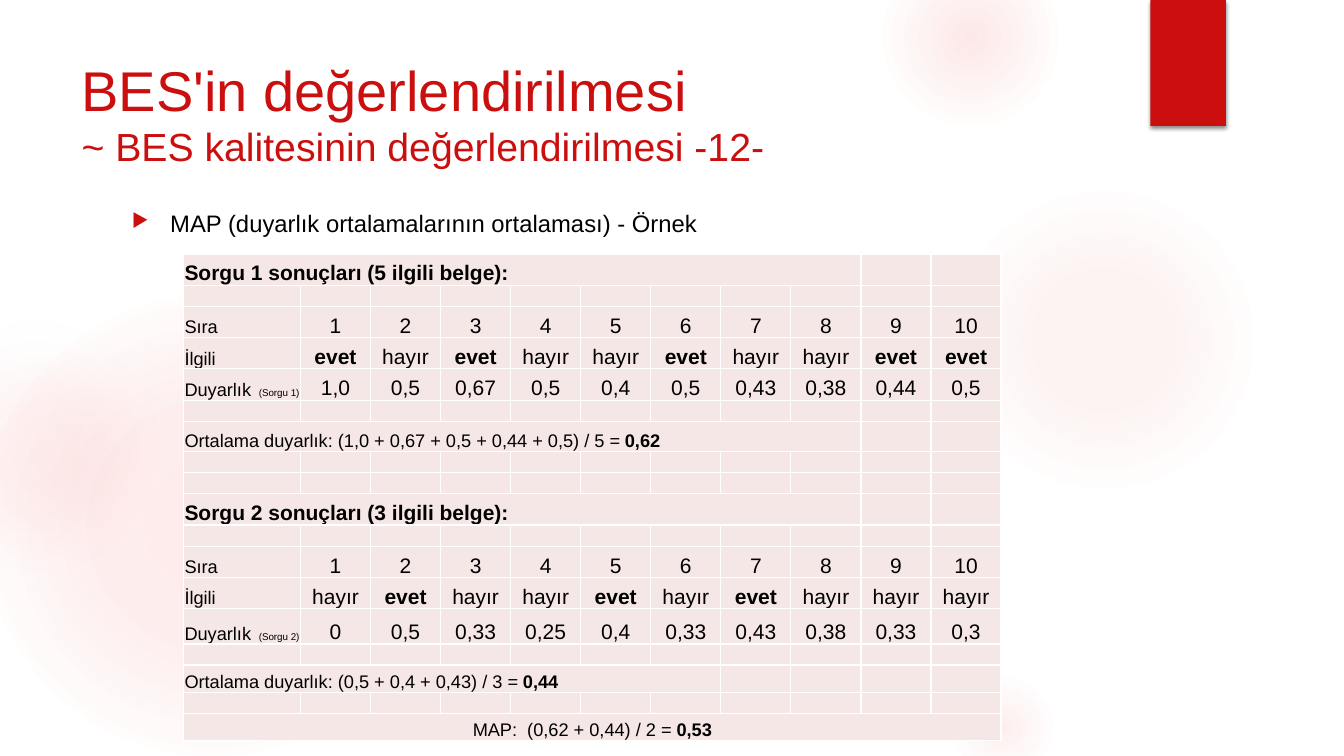
from lxml import etree
from pptx import Presentation
from pptx.dml.color import RGBColor
from pptx.enum.shapes import MSO_SHAPE
from pptx.enum.text import MSO_ANCHOR, PP_ALIGN
from pptx.oxml import parse_xml
from pptx.oxml.ns import nsdecls, qn
from pptx.util import Inches, Pt

OVAL, RECTANGLE = MSO_SHAPE.OVAL, MSO_SHAPE.RECTANGLE
TOP, BOTTOM = MSO_ANCHOR.TOP, MSO_ANCHOR.BOTTOM
LEFT, CENTER = PP_ALIGN.LEFT, PP_ALIGN.CENTER

THEME = {
    "font": "Arial", "red": "CB0F0F", "glow": "F35C5C", "pale": "F3F3F3",
    "cell": "F6E7E7", "grid": "FFFFFF", "ink": "000000",
    "title": 40, "subtitle": 28, "bullet": 17, "value": 15, "label": 13, "note": 7, "gap": 8,
}


def style(font, size, color="ink", bold=False):
    font.name = THEME["font"]
    font.size = Pt(THEME[size])
    font.bold = bold
    font.color.rgb = RGBColor.from_string(THEME[color])


def write(cell, pieces, align=LEFT):
    paragraph = cell.text_frame.paragraphs[0]
    paragraph.alignment = align
    for words, size, bold in pieces:
        run = paragraph.add_run()
        run.text = words
        style(run.font, size, bold=bold)


deck = Presentation()
deck.slide_width, deck.slide_height = Inches(13.33), Inches(7.5)
slide = deck.slides.add_slide(deck.slide_layouts[5])

glows = [
    (-0.17, 2.92, 4.58, [(0, 11), (36, 10), (75, 0)], "glow"),
    (-0.92, 3.17, 2.58, [(0, 8), (36, 5), (71, 0)], "pale"),
    (9.41, 1.83, 3.08, [(0, 7), (36, 6), (69, 0)], "glow"),
    (8.75, -0.5, 1.75, [(0, 14), (36, 7), (73, 0)], "glow"),
    (9.41, 6.67, 1.08, [(0, 10), (31, 5), (66, 0)], "glow"),
]
for left, top, size, stops, edge in glows:
    glow = slide.shapes.add_shape(OVAL, Inches(left), Inches(top), Inches(size), Inches(size))
    glow.shadow.inherit = False
    glow.line.fill.background()
    colors = [THEME["glow"], THEME["glow"], THEME[edge]]
    stop_list = "".join(
        f'<a:gs pos="{place * 1000}"><a:srgbClr val="{color}"><a:alpha val="{alpha * 1000}"/></a:srgbClr></a:gs>'
        for (place, alpha), color in zip(stops, colors))
    glow.element.spPr.find(qn("a:prstGeom")).addnext(parse_xml(
        f'<a:gradFill {nsdecls("a")} rotWithShape="1"><a:gsLst>{stop_list}</a:gsLst><a:path path="circle">'
        '<a:fillToRect l="50000" t="50000" r="50000" b="50000"/></a:path></a:gradFill>'))

ribbon = slide.shapes.add_shape(RECTANGLE, Inches(11.41), 0, Inches(0.75), Inches(1.25))
ribbon.fill.solid()
ribbon.fill.fore_color.rgb = RGBColor.from_string(THEME["red"])
ribbon.line.fill.background()
ribbon.shadow.inherit = False
ribbon.element.spPr.find(qn("a:effectLst")).append(parse_xml(
    f'<a:outerShdw {nsdecls("a")} blurRad="{Pt(3)}" dist="{Pt(2)}" dir="5400000" rotWithShape="0">'
    f'<a:srgbClr val="{THEME["ink"]}"><a:alpha val="45000"/></a:srgbClr></a:outerShdw>'))

example = slide.shapes.add_textbox(Inches(1.21), Inches(2.02), Inches(9.78), Inches(0.42))
example.text_frame.word_wrap = True
bullet = example.text_frame.paragraphs[0]
bullet.text = "MAP (duyarlık ortalamalarının ortalaması) - Örnek"
style(bullet.font, "bullet")
bullet.space_after = Pt(6)
bullet_format = bullet._p.get_or_add_pPr()
bullet_format.set("marL", str(Inches(0.38)))
bullet_format.set("indent", str(-Inches(0.38)))
bullet_marks = [
    f'<a:buClr {nsdecls("a")}><a:srgbClr val="{THEME["red"]}"/></a:buClr>',
    f'<a:buSzPct {nsdecls("a")} val="80000"/>',
    f'<a:buChar {nsdecls("a")} char="▶"/>',
]
for mark in bullet_marks:
    bullet_format.find(qn("a:defRPr")).addprevious(parse_xml(mark))
bullet_format.insert(0, parse_xml(
    f'<a:spcBef {nsdecls("a")}><a:spcPct val="20000"/></a:spcBef>'))

queries = [
    (0, 1, 5, "1,0 + 0,67 + 0,5 + 0,44 + 0,5", "0,62", 9, {1, 3, 6, 9, 10},
     "1,0 0,5 0,67 0,5 0,4 0,5 0,43 0,38 0,44 0,5"),
    (9, 2, 3, "0,5 + 0,4 + 0,43", "0,44", 7, {2, 5, 7},
     "0 0,5 0,33 0,25 0,4 0,33 0,43 0,38 0,33 0,3"),
]
row_heights = [0.31, 0.21, 0.31, 0.31, 0.31, 0.21, 0.3, 0.21, 0.21,
               0.31, 0.21, 0.31, 0.31, 0.35, 0.21, 0.27, 0.21, 0.27]
ranks = range(1, 11)
label_width, table_width = 1.16, 8.11
results = slide.shapes.add_table(len(row_heights), len(ranks) + 1, Inches(1.82), Inches(2.52),
                                 Inches(table_width), Inches(sum(row_heights))).table
results.first_row = results.horz_banding = False
for row, height in zip(results.rows, row_heights):
    row.height = Inches(height)
results.columns[0].width = Inches(label_width)
for rank in ranks:
    results.columns[rank].width = Inches((table_width - label_width) / len(ranks))

for start, number, relevant, terms, average, span, hits, precisions in queries:
    results.cell(start, 0).merge(results.cell(start, 8))
    write(results.cell(start, 0), [(f"Sorgu {number} sonuçları ({relevant} ilgili belge):", "value", True)])
    write(results.cell(start + 2, 0), [("Sıra", "label", False)])
    write(results.cell(start + 3, 0), [("İlgili", "label", False)])
    write(results.cell(start + 4, 0), [("Duyarlık ", "label", False), (f" (Sorgu {number})", "note", False)])
    for rank, precision in zip(ranks, precisions.split()):
        hit = rank in hits
        write(results.cell(start + 2, rank), [(str(rank), "value", False)], CENTER)
        write(results.cell(start + 3, rank), [("evet" if hit else "hayır", "value", hit)], CENTER)
        write(results.cell(start + 4, rank), [(precision, "value", False)], CENTER)
    results.cell(start + 6, 0).merge(results.cell(start + 6, span - 1))
    write(results.cell(start + 6, 0),
          [(f"Ortalama duyarlık: ({terms}) / {relevant} = ", "label", False), (average, "label", True)])

results.cell(17, 0).merge(results.cell(17, 10))
write(results.cell(17, 0), [("MAP:  (0,62 + 0,44) / 2 = ", "label", False), ("0,53", "label", True)], CENTER)

for cell in results.iter_cells():
    cell.vertical_anchor = BOTTOM
    cell.margin_left = cell.margin_right = cell.margin_top = Inches(0.01)
    cell.margin_bottom = 0
    for side in ("lnL", "lnR", "lnT", "lnB"):
        border = etree.SubElement(cell._tc.get_or_add_tcPr(), qn(f"a:{side}"), w=str(Pt(1)))
        paint = etree.SubElement(border, qn("a:solidFill"))
        etree.SubElement(paint, qn("a:srgbClr"), val=THEME["grid"])
    cell.fill.solid()
    cell.fill.fore_color.rgb = RGBColor.from_string(THEME["cell"])
    if not cell.text:
        ending = cell.text_frame.paragraphs[0]._p.get_or_add_endParaRPr()
        ending.set("sz", str(THEME["gap"] * 100))

title = slide.shapes.title
title.left, title.top, title.width, title.height = Inches(0.71), Inches(0.5), Inches(10.29), Inches(1.53)
title.text_frame.vertical_anchor = TOP
title.text_frame.word_wrap = True
heading = title.text_frame.paragraphs[0]
heading.alignment = LEFT
for words, size in [("BES'in değerlendirilmesi", "title"),
                    ("~ BES kalitesinin değerlendirilmesi -12-", "subtitle")]:
    if heading.runs:
        heading.add_line_break()
    line = heading.add_run()
    line.text = words
    style(line.font, size, "red")
slide.shapes._spTree.append(title.element)

deck.save("out.pptx")
